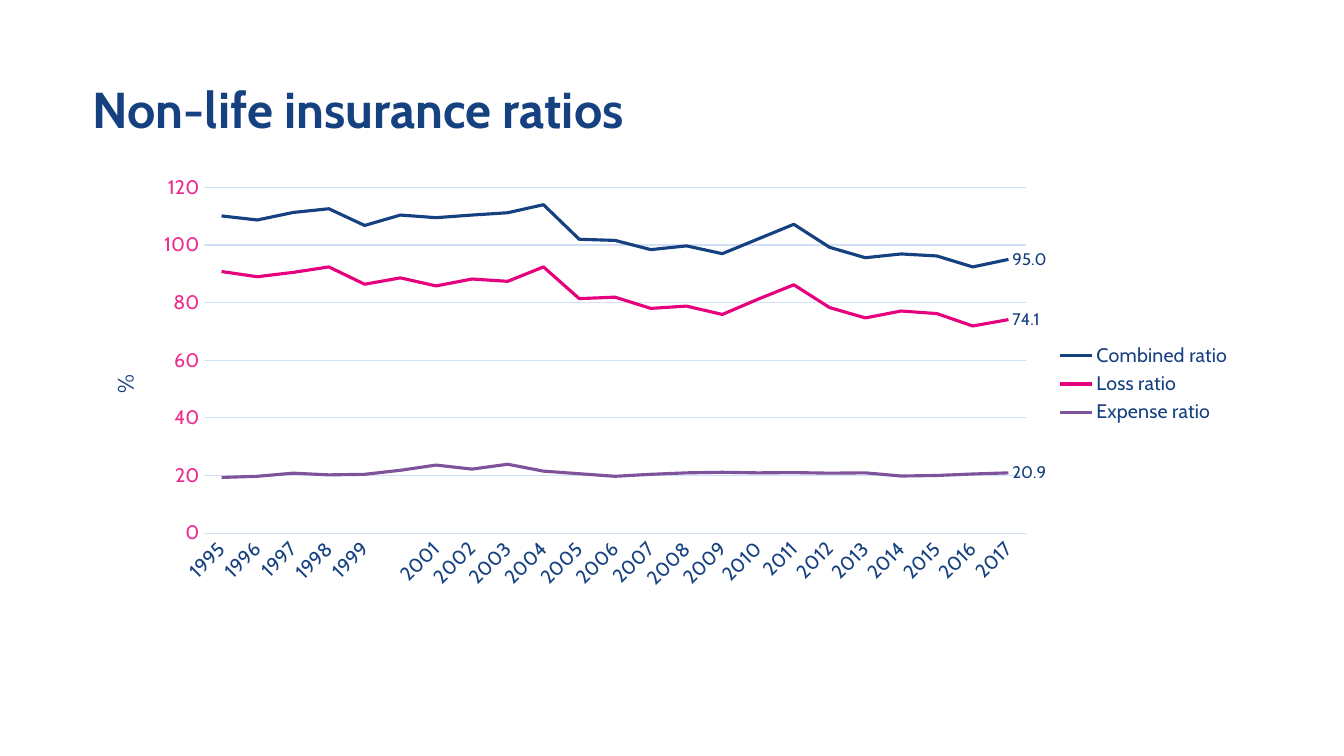
from dataclasses import dataclass
from lxml.etree import SubElement
from pptx import Presentation
from pptx.chart.data import CategoryChartData as Data
from pptx.dml.color import RGBColor as RGB
from pptx.enum.chart import XL_CHART_TYPE as Kind, XL_LABEL_POSITION as Spot
from pptx.enum.chart import XL_LEGEND_POSITION as Side, XL_TICK_MARK as Tick
from pptx.enum.text import MSO_ANCHOR as Anchor, PP_ALIGN as Align
from pptx.oxml.ns import qn
from pptx.util import Inches, Pt

TITLE = "Non-life insurance ratios"
UNIT = "%"
YEARS = range(1995, 2018)
RATIOS = {
    "Combined ratio": (
        110.1, 108.7, 111.3, 112.6, 106.8, 110.4, 109.5, 110.4,
        111.2, 114, 102, 101.6, 98.4, 99.7, 97, 102.1,
        107.2, 99.2, 95.6, 96.9, 96.2, 92.4, 95),
    "Loss ratio": (
        90.8, 89, 90.5, 92.4, 86.4, 88.6, 85.8, 88.2,
        87.4, 92.4, 81.4, 81.9, 78, 78.8, 75.9, 81.2,
        86.2, 78.3, 74.7, 77.1, 76.2, 71.9, 74.1),
    "Expense ratio": (
        19.3, 19.7, 20.8, 20.2, 20.4, 21.8, 23.6, 22.2,
        23.9, 21.5, 20.6, 19.7, 20.4, 20.9, 21.1, 20.9,
        21, 20.8, 20.9, 19.8, 20, 20.5, 20.9),
}


@dataclass(frozen=True)
class Theme:
    face: str = "Cabin"
    navy: str = "164180"
    pink: str = "E6007E"
    plum: str = "7F539C"
    rose: str = "EE2C90"
    grid: str = "D1E0F7"
    head: int = 36
    unit: int = 16
    body: int = 14
    note: int = 12
    thin: float = 0.75
    line: float = 2.25


theme = Theme()
WIDE, HIGH = 13.33, 7.5
LEFT, SPAN, TALL = 0.82, 11.5, 4.3


def style(font, size, color, bold=False):
    font.name = theme.face
    font.size = Pt(size)
    font.bold = bold
    font.color.rgb = RGB.from_string(color)


def stroke(line, color, width):
    line.color.rgb = RGB.from_string(color)
    line.width = Pt(width)


def place(owner, index, **parts):
    layout = owner.find(qn("c:layout"))
    if layout is None:
        layout = SubElement(owner, qn("c:layout"))
        owner.insert(index, layout)
    inner = SubElement(layout, qn("c:manualLayout"))
    for name, value in parts.items():
        SubElement(inner, qn(f"c:{name}")).set("val", str(value))


def add_title(slide):
    box = slide.shapes.title
    box.left, box.top = Inches(LEFT), Inches(0.39)
    box.width, box.height = Inches(SPAN), Inches(1.45)
    frame = box.text_frame
    frame.text = TITLE
    frame.word_wrap = True
    frame.vertical_anchor = Anchor.MIDDLE
    para = frame.paragraphs[0]
    para.alignment = Align.LEFT
    para.line_spacing = 0.9
    style(para.font, theme.head, theme.navy, True)


def style_axes(chart):
    years, scale = chart.category_axis, chart.value_axis
    for axis, color in (years, theme.navy), (scale, theme.rose):
        axis.major_tick_mark = axis.minor_tick_mark = Tick.NONE
        style(axis.tick_labels.font, theme.body, color)
    stroke(years.format.line, theme.grid, theme.thin)
    years._element.find(qn("c:txPr")).find(qn("a:bodyPr")).set("rot", "-2700000")

    scale.minimum_scale, scale.maximum_scale, scale.major_unit = 0, 120, 20
    scale.tick_labels.number_format = "0"
    scale.tick_labels.number_format_is_linked = False
    scale.format.line.fill.background()
    stroke(scale.major_gridlines.format.line, theme.grid, theme.thin)
    title = scale.axis_title
    title.text_frame.text = UNIT
    style(title.text_frame.paragraphs[0].font, theme.unit, theme.navy)
    place(title._element, 1, xMode="edge", yMode="edge", x=0.02, y=0.47)


def add_chart(slide):
    data = Data(number_format="0.0")
    data.categories = [str(year) for year in YEARS]
    for name, values in RATIOS.items():
        data.add_series(name, values)
    chart = slide.shapes.add_chart(
        Kind.LINE, Inches(LEFT), Inches(1.66),
        Inches(SPAN), Inches(TALL), data).chart
    chart.has_title = False
    style(chart.font, theme.body, theme.navy)
    style_axes(chart)

    chart.has_legend = True
    chart.legend.position = Side.RIGHT
    chart.legend.include_in_layout = False
    style(chart.legend.font, theme.body, theme.navy)

    plot = chart.plots[0]
    plot.vary_by_categories = False
    for series, color in zip(plot.series, (theme.navy, theme.pink, theme.plum)):
        series.smooth = False
        stroke(series.format.line, color, theme.line)
        series.data_labels.show_value = False
        label = series.points[len(YEARS) - 1].data_label
        style(label.font, theme.note, theme.navy)
        label.position = Spot.RIGHT

    place(chart._chartSpace.chart.plotArea, 0,
          layoutTarget="inner", xMode="edge", yMode="edge",
          x=1.2 / SPAN, y=0.2 / TALL, w=8.16 / SPAN, h=3.43 / TALL)


def main():
    deck = Presentation()
    deck.slide_width, deck.slide_height = Inches(WIDE), Inches(HIGH)
    slide = deck.slides.add_slide(deck.slide_layouts[5])
    add_title(slide)
    add_chart(slide)
    deck.save("out.pptx")


if __name__ == "__main__":
    main()
